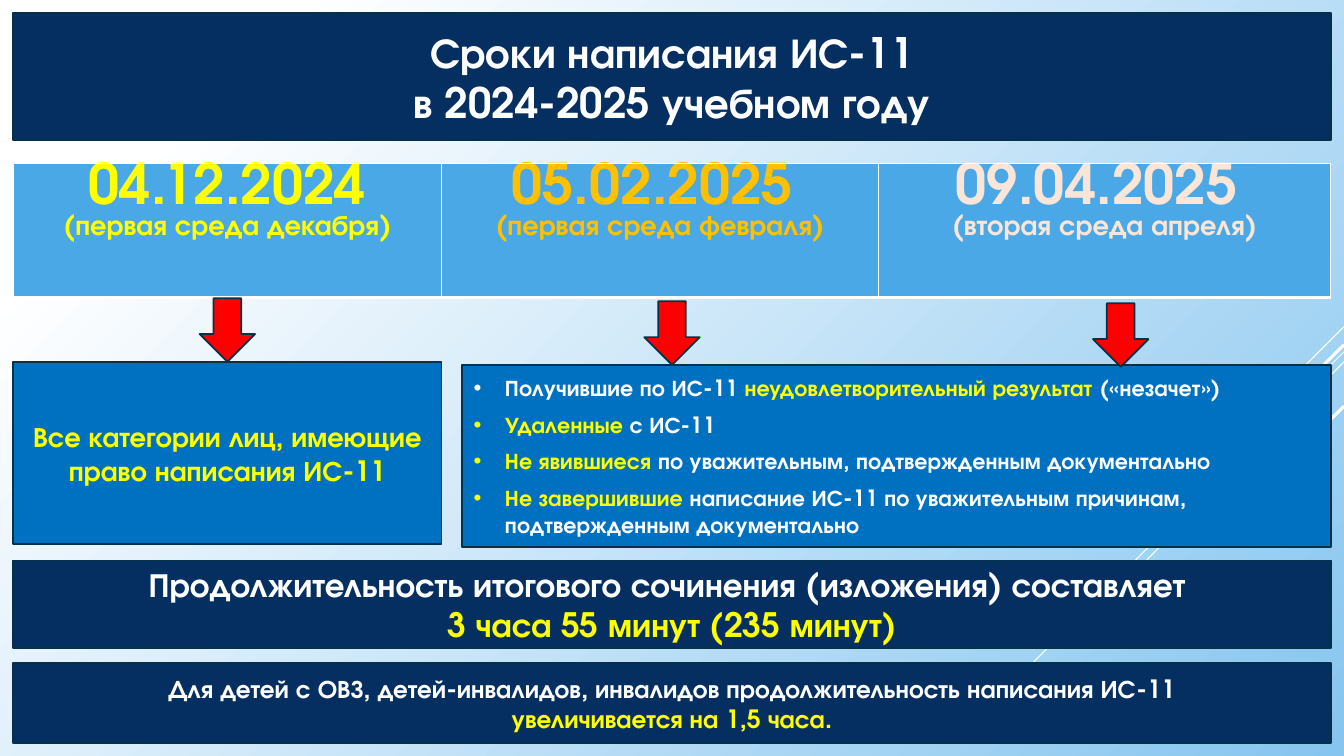
"""Build the slide with the dates and rules of the final essay for 2024-2025."""
from lxml import etree
from pptx import Presentation
from pptx.dml.color import RGBColor
from pptx.enum.shapes import MSO_CONNECTOR, MSO_SHAPE
from pptx.enum.text import MSO_ANCHOR, MSO_AUTO_SIZE, PP_ALIGN
from pptx.oxml.ns import qn
from pptx.util import Inches, Pt

STRAIGHT = MSO_CONNECTOR.STRAIGHT
PROCESS = MSO_SHAPE.FLOWCHART_PROCESS
DOWN_ARROW = MSO_SHAPE.DOWN_ARROW
TOP, MIDDLE = MSO_ANCHOR.TOP, MSO_ANCHOR.MIDDLE
NO_AUTOFIT = MSO_AUTO_SIZE.NONE
CENTER, LEFT = PP_ALIGN.CENTER, PP_ALIGN.LEFT

WHITE = RGBColor(0xFF, 0xFF, 0xFF)
SKY = RGBColor(0x86, 0xC5, 0xEF)
NAVY = RGBColor(0x05, 0x2F, 0x61)
OUTLINE = RGBColor(0x04, 0x31, 0x48)
BLUE = RGBColor(0x00, 0x70, 0xC0)
LIGHT_BLUE = RGBColor(0x4A, 0xA8, 0xE7)
RED = RGBColor(0xFF, 0x00, 0x00)
YELLOW = RGBColor(0xFF, 0xFF, 0x00)
ORANGE = RGBColor(0xFF, 0xC0, 0x00)
CREAM = RGBColor(0xFA, 0xE5, 0xD7)

FONT = "TeX Gyre Adventor"
MARGIN = 0.13
FULL_WIDTH = 13.07


def style_shape(shape, fill):
    shape.fill.solid()
    shape.fill.fore_color.rgb = fill
    shape.line.color.rgb = OUTLINE
    shape.line.width = Pt(1.25)
    shape.shadow.inherit = False


def write_lines(text_frame, lines, sizes, alignment=CENTER, bullet=False):
    text_frame.word_wrap = True
    text_frame.auto_size = NO_AUTOFIT
    text_frame.vertical_anchor = MIDDLE
    for index, (line, size) in enumerate(zip(lines, sizes)):
        paragraph = text_frame.paragraphs[0] if index == 0 else text_frame.add_paragraph()
        paragraph.alignment = alignment
        if bullet:
            properties = paragraph._p.get_or_add_pPr()
            properties.set("marL", str(Inches(0.33)))
            properties.set("indent", str(Inches(-0.31)))
            etree.SubElement(properties, qn("a:buFont"), typeface="Arial")
            etree.SubElement(properties, qn("a:buChar"), char="•")
            paragraph.space_before = Pt(1 if index else 0)
            paragraph.space_after = Pt(6)
        paragraph.font.name = FONT
        paragraph.font.size = Pt(size)
        paragraph.font.bold = True
        for text, color in line:
            run = paragraph.add_run()
            run.text = text
            run.font.color.rgb = color
            if bullet:
                run._r.get_or_add_rPr().set("spc", "10")


presentation = Presentation()
presentation.slide_width = Inches(13.33)
presentation.slide_height = Inches(7.5)
slide = presentation.slides.add_slide(presentation.slide_layouts[5])

background = slide.background.fill
background.gradient()
background.gradient_angle = 315
for stop, position, color in zip(background.gradient_stops, (0.14, 1), (WHITE, SKY)):
    stop.position = position
    stop.color.rgb = color

for start_y, end_x, end_y, width in (
    (3.24, 12.33, 4.24, 0.75),
    (3.49, 10.07, 6.75, 0.75),
    (3.59, 11.26, 5.67, 0.75),
    (3.42, 11.42, 5.33, 2.25),
    (4.03, 11.94, 5.42, 2.25),
):
    streak = slide.shapes.add_connector(
        STRAIGHT, Inches(13.33), Inches(start_y), Inches(end_x), Inches(end_y))
    streak.line.color.rgb = WHITE
    streak.line.width = Pt(width)
    etree.SubElement(streak._element.spPr, qn("a:effectLst"))

title = slide.shapes.title
title.left, title.top = Inches(MARGIN), Inches(0.13)
title.width, title.height = Inches(FULL_WIDTH), Inches(1.26)
style_shape(title, NAVY)
write_lines(
    title.text_frame,
    [[("Сроки написания ИС-11", WHITE)], [("в 2024-2025 учебном году", WHITE)]],
    (30, 30))

dates = (
    (4.25, "04.12.2024", "(первая среда декабря)", YELLOW),
    (4.33, "05.02.2025 ", "(первая среда февраля)", ORANGE),
    (4.49, "09.04.2025 ", "(вторая среда апреля)", CREAM),
)
table = slide.shapes.add_table(
    1, len(dates), Inches(MARGIN), Inches(1.62), Inches(FULL_WIDTH), Inches(1.33)).table
for column, (width, date, weekday, color) in enumerate(dates):
    table.columns[column].width = Inches(width)
    cell = table.cell(0, column)
    cell_properties = cell._tc.get_or_add_tcPr()
    for side, border_width in (("lnL", 1), ("lnR", 1), ("lnT", 1), ("lnB", 3)):
        border = etree.SubElement(cell_properties, qn(f"a:{side}"), w=str(Pt(border_width)))
        border_fill = etree.SubElement(border, qn("a:solidFill"))
        etree.SubElement(border_fill, qn("a:srgbClr"), val=str(WHITE))
    cell.fill.solid()
    cell.fill.fore_color.rgb = LIGHT_BLUE
    write_lines(cell.text_frame, [[(date, color)], [(weekday, color)]], (40, 20))
    cell.vertical_anchor = TOP
    cell.margin_top = Inches(0)

everyone = [[("Все категории лиц, имеющие право написания ИС-11", YELLOW)]]
retakers = [
    [("Получившие по ИС-11 ", WHITE), ("неудовлетворительный результат ", YELLOW),
     ("(«незачет»)", WHITE)],
    [("Удаленные", YELLOW), (" с ИС-11", WHITE)],
    [("Не явившиеся ", YELLOW),
     ("по уважительным, подтвержденным документально", WHITE)],
    [("Не завершившие ", YELLOW),
     ("написание ИС-11 по уважительным причинам, подтвержденным документально", WHITE)],
]
duration = [
    [("Продолжительность итогового сочинения (изложения) составляет ", WHITE)],
    [("3 часа 55 минут (235 минут)", YELLOW)],
]
extension = [
    [("Для детей с ОВЗ, детей-инвалидов, инвалидов продолжительность написания ИС-11", WHITE)],
    [("увеличивается на 1,5 часа.", YELLOW)],
]
for left, top, width, height, fill, lines, size, alignment, bullet in (
    (MARGIN, 3.59, 4.25, 1.81, BLUE, everyone, 20, CENTER, False),
    (4.58, 3.62, 8.62, 1.81, BLUE, retakers, 16, LEFT, True),
    (MARGIN, 5.56, FULL_WIDTH, 0.87, NAVY, duration, 24, CENTER, False),
    (MARGIN, 6.58, FULL_WIDTH, 0.79, NAVY, extension, 18, CENTER, False),
):
    box = slide.shapes.add_shape(
        PROCESS, Inches(left), Inches(top), Inches(width), Inches(height))
    style_shape(box, fill)
    write_lines(box.text_frame, lines, [size] * len(lines), alignment, bullet)

for left, top in ((1.98, 2.96), (6.39, 2.99), (10.84, 3.01)):
    arrow = slide.shapes.add_shape(
        DOWN_ARROW, Inches(left), Inches(top), Inches(0.55), Inches(0.63))
    style_shape(arrow, RED)

presentation.save("out.pptx")
